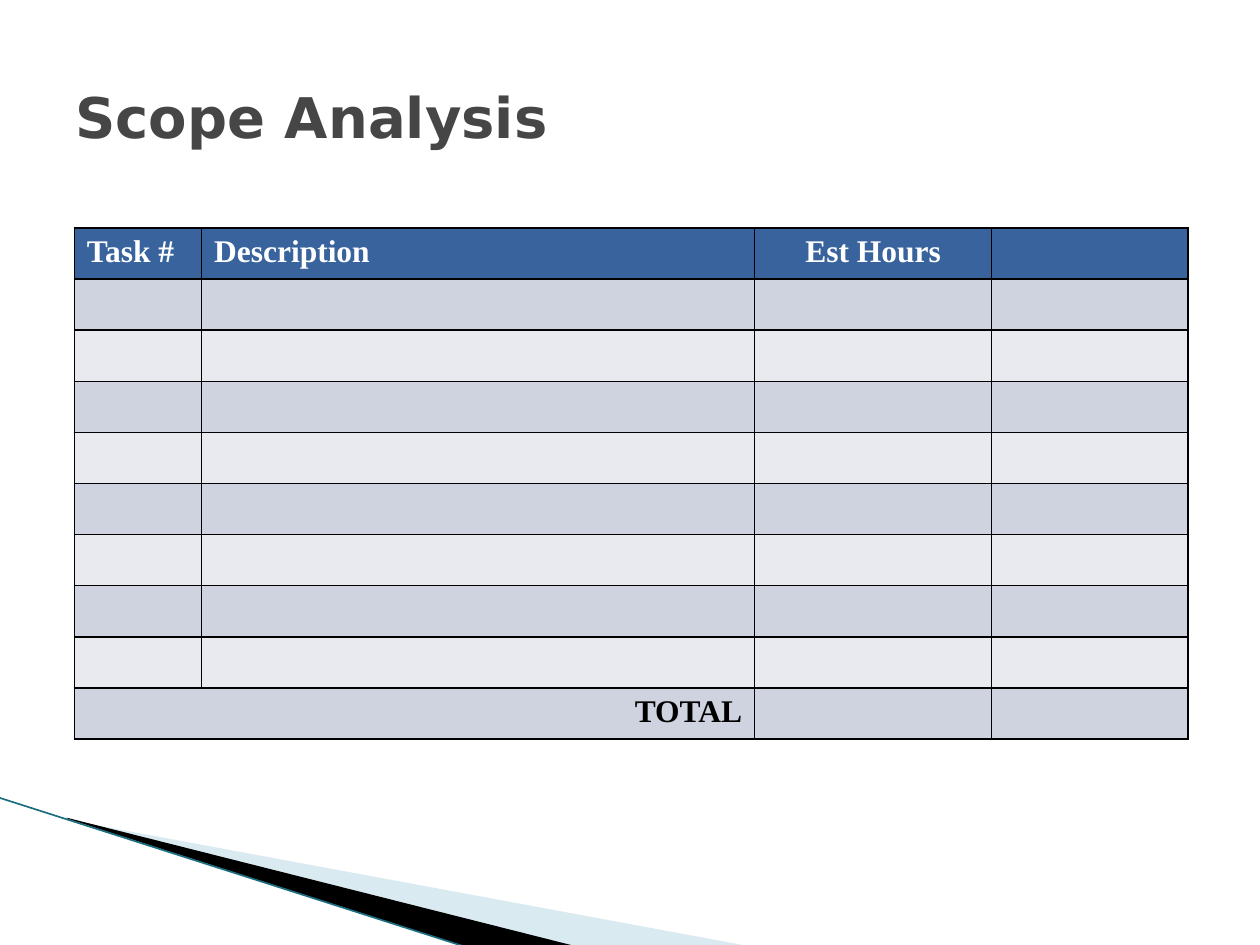
from lxml.etree import SubElement
from pptx import Presentation
from pptx.dml.color import RGBColor
from pptx.enum.shapes import MSO_CONNECTOR
from pptx.enum.text import MSO_ANCHOR, PP_ALIGN
from pptx.oxml.ns import qn
from pptx.util import Inches, Pt

WHITE = RGBColor(0xFF, 0xFF, 0xFF)
BLACK = RGBColor(0x00, 0x00, 0x00)
TITLE_GRAY = RGBColor(0x46, 0x46, 0x46)
HEADER_BLUE = RGBColor(0x39, 0x63, 0x9D)
BANDS = (RGBColor(0xE8, 0xEA, 0xEF), RGBColor(0xCE, 0xD3, 0xDF))
PALE_BLUE = RGBColor(0xA0, 0xCB, 0xDC)
TEAL = RGBColor(0x1B, 0x6E, 0x80)


class SlideBuilder:
    """Holds the slide and its text style, and draws each kind of element."""

    title_font = "DejaVu Sans"
    table_font = "Times New Roman"

    def __init__(self, slide):
        self.slide = slide

    def add_text(self, paragraph, text, font, size, color, align=PP_ALIGN.LEFT):
        paragraph.alignment = align
        run = paragraph.add_run()
        run.text = text
        run.font.name = font
        run.font.size = Pt(size)
        run.font.bold = True
        run.font.color.rgb = color

    def title(self, text, left, top, width, height):
        box = self.slide.shapes.add_textbox(
            Inches(left), Inches(top), Inches(width), Inches(height))
        frame = box.text_frame
        frame.word_wrap = True
        frame.vertical_anchor = MSO_ANCHOR.MIDDLE
        self.add_text(frame.paragraphs[0], text, self.title_font, 32, TITLE_GRAY)

    def wedge(self, points, color, opacity=100):
        corners = [(Inches(x), Inches(y)) for x, y in points]
        outline = self.slide.shapes.build_freeform(*corners[0], scale=1.0)
        outline.add_line_segments(corners[1:], close=True)
        shape = outline.convert_to_shape()
        shape.shadow.inherit = False
        shape.line.fill.background()
        shape.fill.solid()
        shape.fill.fore_color.rgb = color
        if opacity < 100:
            tint = shape.element.spPr.find(qn("a:solidFill"))[0]
            SubElement(tint, qn("a:alpha"), val=str(opacity * 1000))

    def line(self, start, end, color, width):
        connector = self.slide.shapes.add_connector(
            MSO_CONNECTOR.STRAIGHT, *map(Inches, start + end))
        connector.line.color.rgb = color
        connector.line.width = Pt(width)
        SubElement(connector.element.spPr, qn("a:effectLst"))

    def style_cell(self, cell, color):
        properties = cell._tc.get_or_add_tcPr()
        for side in ("lnL", "lnR", "lnT", "lnB"):
            border = SubElement(properties, qn(f"a:{side}"), w=str(Pt(1)))
            fill = SubElement(border, qn("a:solidFill"))
            SubElement(fill, qn("a:srgbClr"), val=str(BLACK))
        cell.fill.solid()
        cell.fill.fore_color.rgb = color

    def table(self, left, top, widths, heights):
        table = self.slide.shapes.add_table(
            len(heights), len(widths), Inches(left), Inches(top),
            Inches(sum(widths)), Inches(sum(heights))).table
        for column, width in zip(table.columns, widths):
            column.width = Inches(width)
        for index, (row, height) in enumerate(zip(table.rows, heights)):
            row.height = Inches(height)
            for cell in row.cells:
                self.style_cell(cell, BANDS[index % 2] if index else HEADER_BLUE)
        return table

    def label(self, cell, text, color, align=PP_ALIGN.LEFT):
        self.add_text(cell.text_frame.paragraphs[0], text, self.table_font, 18, color, align)


def main():
    presentation = Presentation()
    presentation.slide_width = Inches(10)
    presentation.slide_height = Inches(7.5)
    builder = SlideBuilder(presentation.slides.add_slide(presentation.slide_layouts[6]))

    builder.wedge([(0.55, 6.51), (5.95, 7.51), (4.56, 7.51), (0.55, 6.5)], PALE_BLUE, 40)
    builder.wedge([(0.53, 6.49), (4.57, 7.51), (3.72, 7.52), (0.54, 6.5)], BLACK)
    builder.line((-0.01, 6.33), (3.71, 7.52), TEAL, 0.95)

    header_height, table_height, task_rows = 0.38, 4.03, 9
    row_height = (table_height - header_height) / task_rows
    scope = builder.table(0.59, 1.81, [1.01, 4.39, 1.88, 1.56],
                          [header_height] + [row_height] * task_rows)
    builder.label(scope.cell(0, 0), "Task #", WHITE)
    builder.label(scope.cell(0, 1), "Description", WHITE)
    builder.label(scope.cell(0, 2), "Est Hours", WHITE, PP_ALIGN.CENTER)
    total = scope.cell(task_rows, 0)
    total.merge(scope.cell(task_rows, 1))
    builder.label(total, "TOTAL", BLACK, PP_ALIGN.RIGHT)

    builder.title("Scope Analysis", 0.5, 0.3, 9, 1.25)
    presentation.save("out.pptx")


if __name__ == "__main__":
    main()
